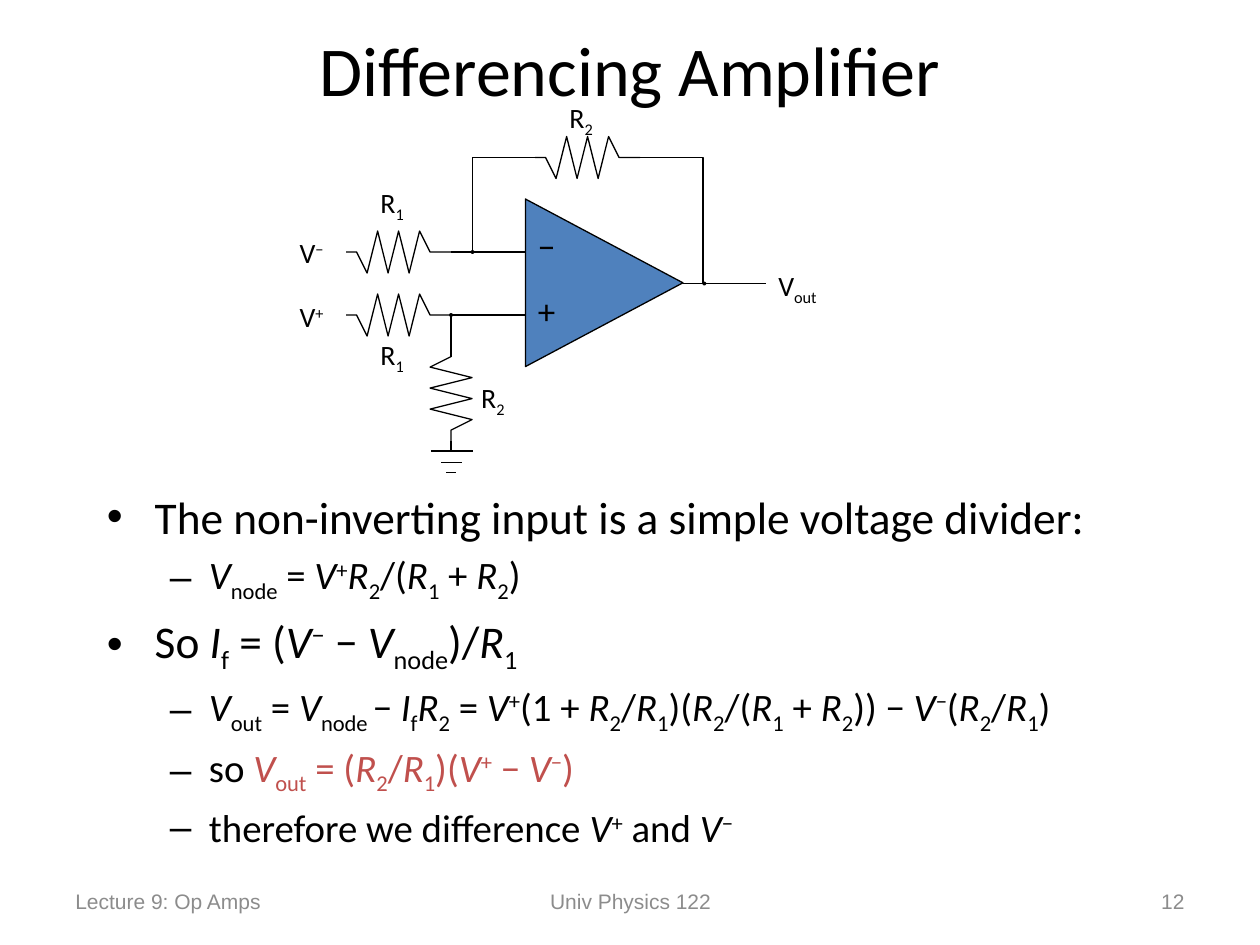
from dataclasses import dataclass

from lxml.etree import SubElement
from pptx import Presentation
from pptx.dml.color import RGBColor
from pptx.enum.shapes import MSO_CONNECTOR, MSO_SHAPE
from pptx.enum.text import MSO_ANCHOR, PP_ALIGN
from pptx.oxml.ns import qn
from pptx.util import Inches, Pt

BLACK, GREY, RED, BLUE = "000000", "8C8C8C", "C0504D", "4F81BD"
BASELINES = {"_": "-25000", "^": "30000"}
STEP = 1 / 12
SWING = 1 / 6
ZIGZAG = [(0, 0), (2, 0), (3, -1), (4, 1), (5, -1), (6, 1),
          (7, -1), (8, 1), (9, 0), (10, 0)]


@dataclass
class Label:
    markup: str
    left: float
    top: float
    width: float
    height: float = 0.37
    size: float = 16
    color: str = BLACK
    font: str = "Calibri"
    align: PP_ALIGN = PP_ALIGN.LEFT
    anchor: MSO_ANCHOR = MSO_ANCHOR.TOP
    wrap: bool = False


@dataclass
class Level:
    bullet: str
    size: float
    margin: float
    hanging: float


@dataclass
class Point:
    level: Level
    markup: str
    result: str = ""


@dataclass
class Resistor:
    x: float
    y: float
    vertical: bool = False


@dataclass
class Wire:
    x1: float
    y1: float
    x2: float
    y2: float


MAIN = Level("•", 25.9, 0.38, 0.38)
SUB = Level("–", 22.2, 0.81, 0.31)

FOOTER = dict(top=6.95, height=0.4, size=12, color=GREY, font="Arial",
              anchor=MSO_ANCHOR.MIDDLE, wrap=True)
HEADINGS = [
    Label("Lecture 9: Op Amps", left=0.5, width=2.33, **FOOTER),
    Label("Univ Physics 122", left=3.42, width=3.17, align=PP_ALIGN.CENTER, **FOOTER),
    Label("12", left=7.17, width=2.33, align=PP_ALIGN.RIGHT, **FOOTER),
    Label("Differencing Amplifier", 0.75, -0.08, 8.5, 1.25, 40,
          align=PP_ALIGN.CENTER, anchor=MSO_ANCHOR.MIDDLE, wrap=True),
]
POINTS = [
    Point(MAIN, "The non-inverting input is a simple voltage divider:"),
    Point(SUB, "*V|_node| = |*V|^+|*R|_2|/(|*R|_1| + |*R|_2|)"),
    Point(MAIN, "So |*I|_f| = (|*V|^−| − |*V|_node|)/|*R|_1"),
    Point(SUB, "*V|_out| = |*V|_node |− |*I|_f|*R|_2| = |*V|^+|(1 + |*R|_2|/|*R|_1"
               "|)(|*R|_2|/(|*R|_1| + |*R|_2|)) − |*V|^−|(|*R|_2|/|*R|_1|)"),
    Point(SUB, "so ", "*V|_out| = (|*R|_2|/|*R|_1|)(|*V|^+| − |*V|^−|)"),
    Point(SUB, "therefore we difference |*V|^+| and |*V|^−"),
]
CIRCUIT_LABELS = [
    Label("−", 4.17, 1.73, 0.35, 0.43, 20),
    Label("+", 4.17, 2.25, 0.36, 0.43, 20),
    Label("V|^−", 2.28, 1.82, 0.43),
    Label("V|^+", 2.28, 2.33, 0.44),
    Label("V|_out", 6.08, 2.08, 0.56),
    Label("R|_1", 2.92, 1.42, 0.45),
    Label("R|_1", 2.92, 2.63, 0.45),
    Label("R|_2", 4.42, 0.75, 0.45),
    Label("R|_2", 3.72, 2.97, 0.45),
]
RESISTORS = [Resistor(3.58, 2), Resistor(3.58, 2.5), Resistor(5.08, 1.25),
             Resistor(3.58, 3.58, vertical=True)]
WIRES = [
    Wire(4.17, 2.5, 3.58, 2.5), Wire(4.17, 2, 3.58, 2), Wire(5.42, 2.25, 6.08, 2.25),
    Wire(3.58, 2.83, 3.58, 2.5), Wire(3.58, 3.5, 3.58, 3.58),
    Wire(3.42, 3.58, 3.75, 3.58), Wire(3.5, 3.67, 3.67, 3.67),
    Wire(3.54, 3.75, 3.62, 3.75),
]
FEEDBACK = [
    [(3.75, 2), (3.75, 1.25), (4.25, 1.25)],
    [(5.08, 1.25), (5.58, 1.25), (5.58, 2.25)],
]
JUNCTIONS = [(3.75, 2), (5.59, 2.25), (3.58, 2.5)]


def rgb(color: str) -> RGBColor:
    return RGBColor.from_string(color)


def add_runs(paragraph, markup: str, size: float, color: str = BLACK,
             font: str = "Calibri") -> None:
    for piece in markup.split("|"):
        mark = piece[0] if piece[0] in "*_^" else ""
        run = paragraph.add_run()
        run.text = piece[len(mark):]
        run.font.name, run.font.size = font, Pt(size)
        run.font.color.rgb = rgb(color)
        run.font.italic = mark == "*"
        if mark in BASELINES:
            run._r.get_or_add_rPr().set("baseline", BASELINES[mark])


def add_label(slide, label: Label) -> None:
    frame = slide.shapes.add_textbox(
        Inches(label.left), Inches(label.top),
        Inches(label.width), Inches(label.height)).text_frame
    frame.word_wrap, frame.vertical_anchor = label.wrap, label.anchor
    paragraph = frame.paragraphs[0]
    paragraph.alignment = label.align
    add_runs(paragraph, label.markup, label.size, label.color, label.font)


def add_points(slide, points: list[Point]) -> None:
    frame = slide.shapes.add_textbox(
        Inches(0.75), Inches(3.83), Inches(8.5), Inches(3)).text_frame
    frame.word_wrap = True
    for index, point in enumerate(points):
        paragraph = frame.add_paragraph() if index else frame.paragraphs[0]
        level = point.level
        paragraph.level = int(level is SUB)
        paragraph.space_before = Pt(round(level.size * 0.2, 1))
        properties = paragraph._p.get_or_add_pPr()
        properties.set("marL", str(Inches(level.margin)))
        properties.set("indent", str(-Inches(level.hanging)))
        SubElement(properties, qn("a:buFont")).set("typeface", "Arial")
        SubElement(properties, qn("a:buChar")).set("char", level.bullet)
        add_runs(paragraph, point.markup, level.size)
        if point.result:
            add_runs(paragraph, point.result, level.size, RED)


def outline(shape) -> None:
    shape.line.color.rgb = rgb(BLACK)
    shape.line.width = Pt(0.75)


def add_solid(slide, kind: MSO_SHAPE, left: float, top: float,
              width: float, height: float, color: str):
    solid = slide.shapes.add_shape(kind, Inches(left), Inches(top),
                                   Inches(width), Inches(height))
    solid.shadow.inherit = False
    solid.fill.solid()
    solid.fill.fore_color.rgb = rgb(color)
    outline(solid)
    return solid


def add_wire(slide, wire: Wire) -> None:
    connector = slide.shapes.add_connector(
        MSO_CONNECTOR.STRAIGHT, Inches(wire.x1), Inches(wire.y1),
        Inches(wire.x2), Inches(wire.y2))
    outline(connector)
    SubElement(connector._element.spPr, qn("a:effectLst"))


def add_polyline(slide, points: list[tuple[float, float]]) -> None:
    start, *rest = [(Inches(x), Inches(y)) for x, y in points]
    builder = slide.shapes.build_freeform(*start)
    builder.add_line_segments(rest, close=False)
    polyline = builder.convert_to_shape()
    polyline.shadow.inherit = False
    polyline.fill.background()
    outline(polyline)


def add_resistor(slide, resistor: Resistor) -> None:
    x, y = resistor.x, resistor.y
    if resistor.vertical:
        points = [(x - side * SWING, y - along * STEP) for along, side in ZIGZAG]
    else:
        points = [(x - along * STEP, y + side * SWING) for along, side in ZIGZAG]
    add_polyline(slide, points)


def main() -> None:
    deck = Presentation()
    deck.slide_width, deck.slide_height = Inches(10), Inches(7.5)
    slide = deck.slides.add_slide(deck.slide_layouts[6])
    for heading in HEADINGS:
        add_label(slide, heading)
    add_points(slide, POINTS)
    amplifier = add_solid(slide, MSO_SHAPE.ISOSCELES_TRIANGLE, 4.13, 1.62, 1.33, 1.25, BLUE)
    amplifier.rotation = 90
    for wire in WIRES:
        add_wire(slide, wire)
    for resistor in RESISTORS:
        add_resistor(slide, resistor)
    for path_points in FEEDBACK:
        add_polyline(slide, path_points)
    for x, y in JUNCTIONS:
        add_solid(slide, MSO_SHAPE.OVAL, x - 0.01, y - 0.01, 0.02, 0.02, BLACK)
    for label in CIRCUIT_LABELS:
        add_label(slide, label)
    deck.save("out.pptx")


if __name__ == "__main__":
    main()
